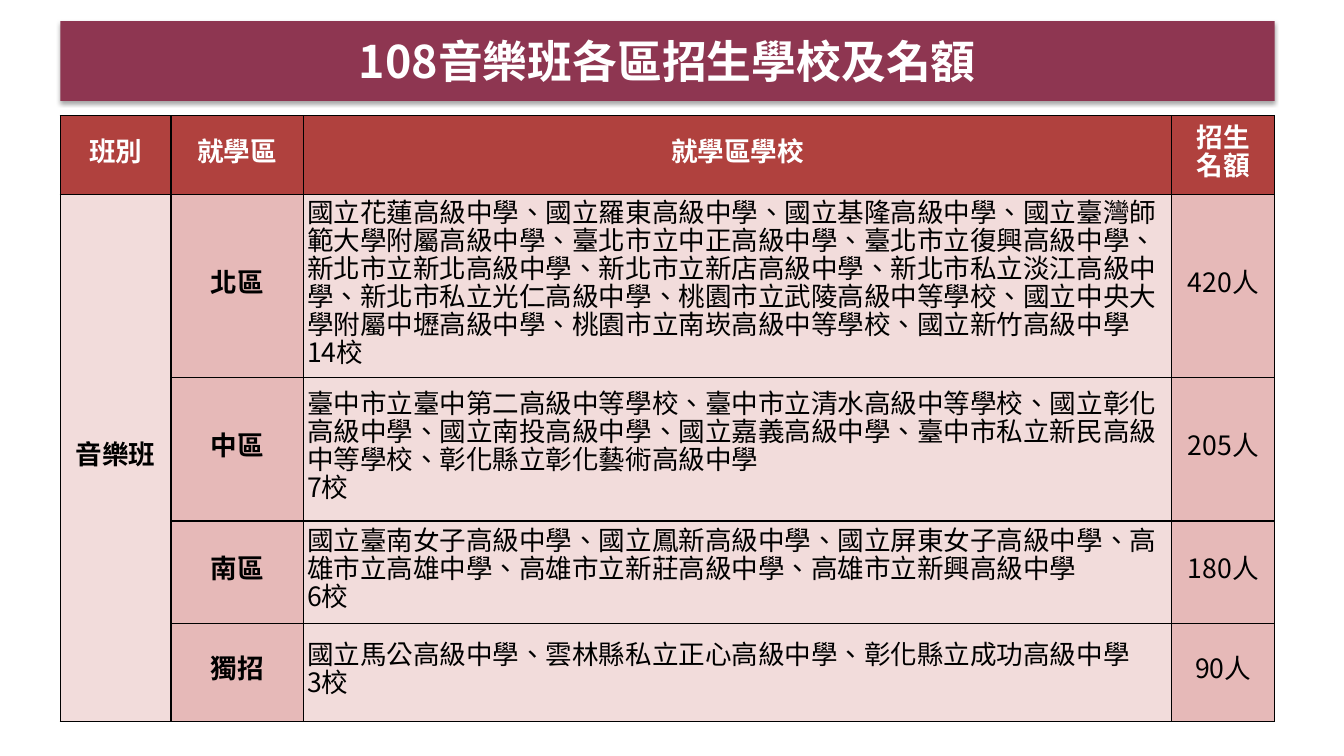
"""Build the slide listing music-class schools and quotas by district."""
from dataclasses import dataclass

from lxml import etree
from pptx import Presentation
from pptx.dml.color import RGBColor
from pptx.enum.lang import MSO_LANGUAGE_ID
from pptx.enum.text import MSO_ANCHOR, MSO_AUTO_SIZE, PP_ALIGN
from pptx.oxml import parse_xml
from pptx.oxml.ns import nsdecls, qn
from pptx.util import Cm, Pt

CENTER, LEFT = PP_ALIGN.CENTER, PP_ALIGN.LEFT
MIDDLE = MSO_ANCHOR.MIDDLE
NO_FIT = MSO_AUTO_SIZE.NONE
CHINESE = MSO_LANGUAGE_ID.TRADITIONAL_CHINESE
FONT = "Noto Sans CJK SC"
BLACK, WHITE = "000000", "FFFFFF"
PLUM, RED, ROSE, PALE = "8E3651", "B0413E", "E6B9B8", "F2DCDB"
LEFT_EDGE, WIDTH = 1.52, 30.6
COLUMN_WIDTHS = (2.79, 3.33, 21.89, 2.59)
HEADER_HEIGHT = 1.98
HEADERS = ("班別", "就學區", "就學區學校", "招生\n名額")


@dataclass
class District:
    name: str
    schools: str
    count: int
    quota: int
    height: float


@dataclass
class CellStyle:
    fill: str
    color: str = BLACK
    bold: bool = False
    align: PP_ALIGN = CENTER


HEADER = CellStyle(RED, WHITE, True)
BODY_STYLES = (
    CellStyle(PALE, bold=True),
    CellStyle(ROSE, bold=True),
    CellStyle(PALE, align=LEFT),
    CellStyle(ROSE),
)
DISTRICTS = (
    District("北區", "國立花蓮高級中學、國立羅東高級中學、國立基隆高級中學、"
             "國立臺灣師範大學附屬高級中學、臺北市立中正高級中學、"
             "臺北市立復興高級中學、新北市立新北高級中學、新北市立新店高級中學、"
             "新北市私立淡江高級中學、新北市私立光仁高級中學、"
             "桃園市立武陵高級中等學校、國立中央大學附屬中壢高級中學、"
             "桃園市立南崁高級中等學校、國立新竹高級中學", 14, 420, 4.62),
    District("中區", "臺中市立臺中第二高級中等學校、臺中市立清水高級中等學校、"
             "國立彰化高級中學、國立南投高級中學、國立嘉義高級中學、"
             "臺中市私立新民高級中等學校、彰化縣立彰化藝術高級中學", 7, 205, 3.61),
    District("南區", "國立臺南女子高級中學、國立鳳新高級中學、國立屏東女子高級中學、"
             "高雄市立高雄中學、高雄市立新莊高級中學、高雄市立新興高級中學",
             6, 180, 2.59),
    District("獨招", "國立馬公高級中學、雲林縣私立正心高級中學、彰化縣立成功高級中學",
             3, 90, 2.46),
)


def rgb(value: str) -> RGBColor:
    """Turn a hex string into a colour."""
    return RGBColor.from_string(value)


def format_text(tf, size: float, style: CellStyle) -> None:
    """Apply font, colour and alignment to all text in a frame."""
    for p in tf.paragraphs:
        p.alignment = style.align
        for r in p.runs:
            r.font.name = FONT
            r.font.size = Pt(size)
            r.font.bold = style.bold
            r.font.color.rgb = rgb(style.color)
            r.font.language_id = CHINESE
            ea = etree.SubElement(r.font._element, qn("a:ea"))
            ea.set("typeface", FONT)


def add_borders(cell) -> None:
    """Draw a thin black line on each side of a cell."""
    tc_pr = cell._tc.get_or_add_tcPr()
    for side in ("lnL", "lnR", "lnT", "lnB"):
        tc_pr.append(parse_xml(
            f'<a:{side} {nsdecls("a")} w="{Pt(1)}"><a:solidFill>'
            f'<a:srgbClr val="{BLACK}"/></a:solidFill></a:{side}>'))


def fill_cell(cell, text: str, style: CellStyle) -> None:
    """Write and format one table cell."""
    add_borders(cell)
    cell.fill.solid()
    cell.fill.fore_color.rgb = rgb(style.fill)
    cell.margin_left = cell.margin_right = Cm(0.1)
    cell.margin_top = cell.margin_bottom = 0
    cell.vertical_anchor = MIDDLE
    cell.text_frame.text = text
    for p in cell.text_frame.paragraphs:
        p.line_spacing = Pt(20)
    format_text(cell.text_frame, 19, style)


def add_title(s) -> None:
    """Format the title placeholder as a shadowed banner."""
    sp = s.shapes.title
    sp.left, sp.top = Cm(LEFT_EDGE), Cm(0.53)
    sp.width, sp.height = Cm(WIDTH), Cm(2.01)
    sp.fill.solid()
    sp.fill.fore_color.rgb = rgb(PLUM)
    sp.line.fill.background()
    sp._element.spPr.append(parse_xml(
        f'<a:effectLst {nsdecls("a")}><a:outerShdw blurRad="{Pt(3.1)}" '
        f'dist="{Pt(1.8)}" dir="5400000" rotWithShape="0">'
        f'<a:srgbClr val="{BLACK}"><a:alpha val="35000"/></a:srgbClr>'
        '</a:outerShdw></a:effectLst>'))
    tf = sp.text_frame
    tf.text = "108音樂班各區招生學校及名額"
    tf.auto_size = NO_FIT
    tf.vertical_anchor = MIDDLE
    format_text(tf, 32, CellStyle(PLUM, WHITE, True))


def add_quota_table(s) -> None:
    """Add the table of districts, schools and quotas."""
    heights = [HEADER_HEIGHT] + [d.height for d in DISTRICTS]
    table = s.shapes.add_table(
        len(heights), len(COLUMN_WIDTHS), Cm(LEFT_EDGE), Cm(2.92),
        Cm(WIDTH), Cm(sum(heights))).table
    table.horz_banding = False
    for column, width in zip(table.columns, COLUMN_WIDTHS):
        column.width = Cm(width)
    for row, height in zip(table.rows, heights):
        row.height = Cm(height)
    for cell, text in zip(table.rows[0].cells, HEADERS):
        fill_cell(cell, text, HEADER)
    for i, d in enumerate(DISTRICTS, 1):
        texts = ("音樂班" if i == 1 else "", d.name,
                 f"{d.schools}\n{d.count}校", f"{d.quota}人")
        for cell, text, style in zip(table.rows[i].cells, texts, BODY_STYLES):
            fill_cell(cell, text, style)
    table.cell(1, 0).merge(table.cell(len(DISTRICTS), 0))


def main() -> None:
    """Create and save the presentation."""
    prs = Presentation()
    prs.slide_width, prs.slide_height = Cm(33.87), Cm(19.05)
    s = prs.slides.add_slide(prs.slide_layouts[5])
    add_title(s)
    add_quota_table(s)
    prs.save("out.pptx")


if __name__ == "__main__":
    main()
